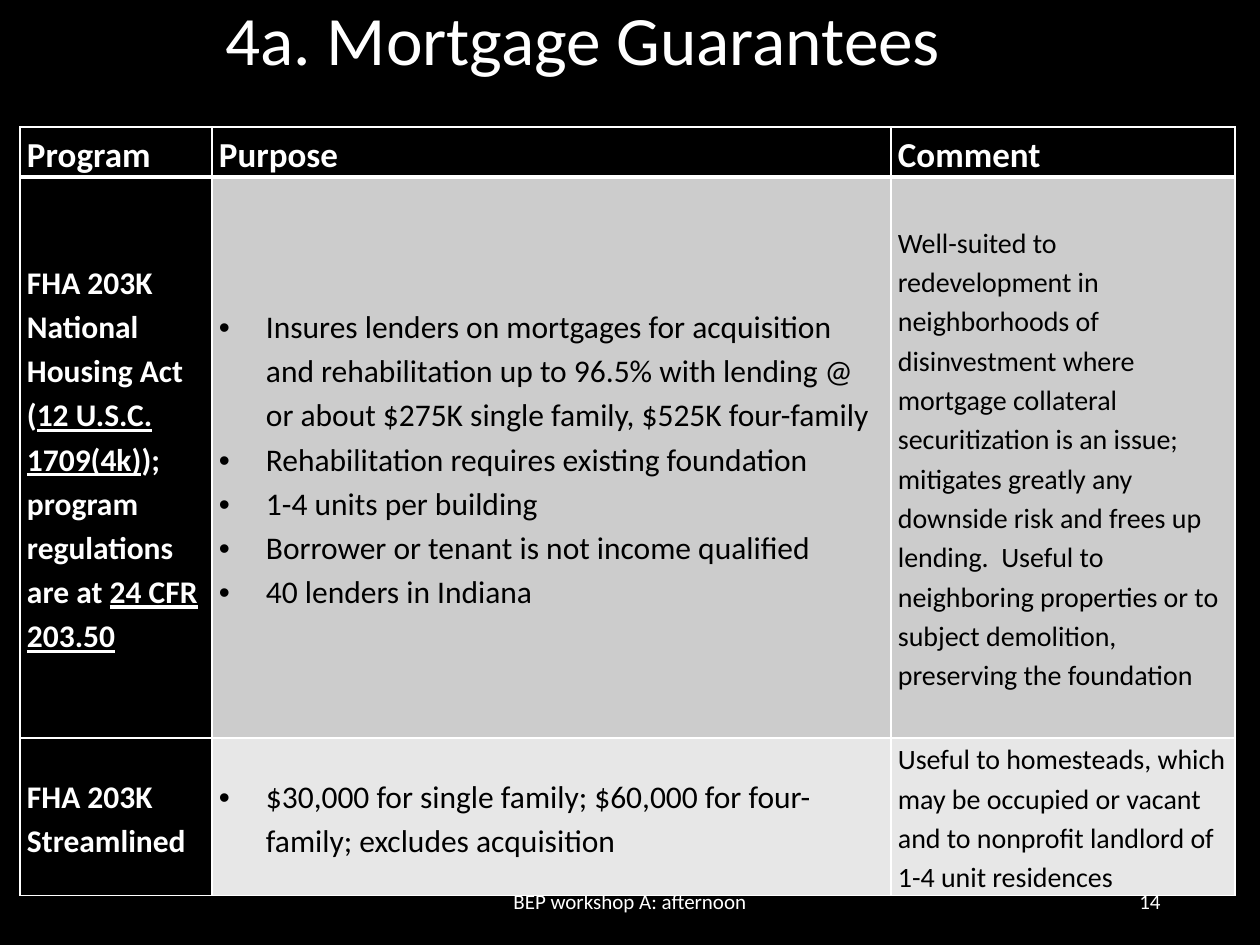
from lxml.etree import SubElement
from pptx import Presentation
from pptx.dml.color import RGBColor
from pptx.enum.text import MSO_ANCHOR as Anchor, MSO_AUTO_SIZE as AutoSize, PP_ALIGN as Align
from pptx.oxml.ns import qn
from pptx.util import Emu, Pt

PX_PER_INCH = 126
TITLE_ONLY = 5
BLACK, WHITE, GREY, LIGHT_GREY = "000000", "FFFFFF", "CCCCCC", "E7E7E7"

COLUMN_WIDTHS = [192, 679, 344]
ROW_HEIGHTS = [50, 561, 157]
BODY_FILLS = [GREY, LIGHT_GREY]
BODY_SIZES = [18, 18, 16]

# A cell is a list of paragraphs, a paragraph a list of (text, underlined) runs.
HEADINGS = ["Program", "Purpose", "Comment"]
PROGRAMS = [
    (
        [
            [("FHA 203K", False)],
            [
                ("National Housing Act (", False),
                ("12 U.S.C. 1709(4k)", True),
                ("); program regulations are at ", False),
                ("24 CFR 203.50", True),
            ],
        ],
        [
            [("Insures lenders on mortgages for acquisition and rehabilitation up to 96.5% "
              "with lending @ or about $275K single family, $525K four-family", False)],
            [("Rehabilitation requires existing foundation", False)],
            [("1-4 units per building", False)],
            [("Borrower or tenant is not income qualified", False)],
            [("40 lenders in Indiana", False)],
        ],
        [[("Well-suited to redevelopment in neighborhoods of disinvestment where mortgage "
           "collateral securitization is an issue; mitigates greatly any downside risk and "
           "frees up lending.  Useful to neighboring properties or to subject demolition, "
           "preserving the foundation", False)]],
    ),
    (
        [[("FHA 203K Streamlined", False)]],
        [[("$30,000 for single family; $60,000 for four-family; excludes acquisition", False)]],
        [[("Useful to homesteads, which may be occupied or vacant and to nonprofit landlord "
           "of 1-4 unit residences", False)]],
    ),
]


def px(length):
    return Emu(round(length * 914400 / PX_PER_INCH))


def color(value):
    return RGBColor.from_string(value)


def add_bullet(paragraph, indent):
    properties = paragraph._p.get_or_add_pPr()
    properties.set("marL", str(px(indent)))
    properties.set("indent", str(-px(indent)))
    SubElement(properties, qn("a:buFont"), typeface="Arial")
    SubElement(properties, qn("a:buChar"), char="•")


def add_border(cell, side, points):
    """Draw one white cell edge; side is L, R, T or B, called in that order."""
    line = SubElement(cell._tc.get_or_add_tcPr(), qn(f"a:ln{side}"), w=str(Pt(points)))
    fill = SubElement(line, qn("a:solidFill"))
    SubElement(fill, qn("a:srgbClr"), val=WHITE)


class SlideBuilder:
    def __init__(self, slide, font_name):
        self.slide = slide
        self.font_name = font_name

    def background(self, fill):
        self.slide.background.fill.solid()
        self.slide.background.fill.fore_color.rgb = color(fill)

    def style_font(self, font, size, text_color, bold=False):
        font.name = self.font_name
        font.size = Pt(size)
        font.bold = bold
        font.color.rgb = color(text_color)

    def fill_text(self, shape, text, size, align):
        frame = shape.text_frame
        frame.text = text
        frame.word_wrap = True
        frame.auto_size = AutoSize.NONE
        frame.vertical_anchor = Anchor.MIDDLE
        paragraph = frame.paragraphs[0]
        paragraph.alignment = align
        self.style_font(paragraph.runs[0].font, size, WHITE)
        return paragraph

    def title(self, text, left, top, width, height):
        shape = self.slide.shapes.title
        shape.left, shape.top, shape.width, shape.height = map(px, (left, top, width, height))
        self.fill_text(shape, text, 39.6, Align.LEFT).line_spacing = 0.9

    def label(self, text, left, top, width, height, align):
        shape = self.slide.shapes.add_textbox(*map(px, (left, top, width, height)))
        self.fill_text(shape, text, 12, align)

    def table(self, left, top, column_widths, row_heights):
        frame = self.slide.shapes.add_table(
            len(row_heights), len(column_widths),
            px(left), px(top), px(sum(column_widths)), px(sum(row_heights)))
        table = frame.table
        for column, width in zip(table.columns, column_widths):
            column.width = px(width)
        for row, height in zip(table.rows, row_heights):
            row.height = px(height)
        return table

    def cell(self, cell, paragraphs, fill, size, text_color, bold, bulleted=False,
             top_line=1, bottom_line=1):
        for side, points in zip("LRTB", (1, 1, top_line, bottom_line)):
            add_border(cell, side, points)
        cell.fill.solid()
        cell.fill.fore_color.rgb = color(fill)
        cell.vertical_anchor = Anchor.MIDDLE
        cell.margin_left = cell.margin_right = px(7)
        cell.margin_top = cell.margin_bottom = 0
        frame = cell.text_frame
        for index, runs in enumerate(paragraphs):
            paragraph = frame.add_paragraph() if index else frame.paragraphs[0]
            paragraph.line_spacing = 1.15
            if bulleted:
                add_bullet(paragraph, 47)
            for text, underlined in runs:
                run = paragraph.add_run()
                run.text = text
                self.style_font(run.font, size, text_color, bold)
                run.font.underline = underlined


def main():
    presentation = Presentation()
    presentation.slide_width, presentation.slide_height = px(1260), px(945)
    slide = presentation.slides.add_slide(presentation.slide_layouts[TITLE_ONLY])
    builder = SlideBuilder(slide, "Calibri")

    builder.background(BLACK)
    builder.title("4a. Mortgage Guarantees", 213, 4, 851, 79)
    builder.label("BEP workshop A: afternoon", 417, 876, 426, 50, Align.CENTER)
    builder.label("14", 890, 876, 283, 50, Align.RIGHT)

    table = builder.table(20, 127, COLUMN_WIDTHS, ROW_HEIGHTS)
    for column, heading in enumerate(HEADINGS):
        builder.cell(table.cell(0, column), [[(heading, False)]], BLACK, 20, WHITE, True,
                     bottom_line=3)
    for row, (program, fill) in enumerate(zip(PROGRAMS, BODY_FILLS), start=1):
        for column, (paragraphs, size) in enumerate(zip(program, BODY_SIZES)):
            is_name = column == 0
            builder.cell(table.cell(row, column), paragraphs,
                         BLACK if is_name else fill, size,
                         WHITE if is_name else BLACK, is_name,
                         bulleted=column == 1, top_line=3 if row == 1 else 1)

    presentation.save("out.pptx")


if __name__ == "__main__":
    main()
